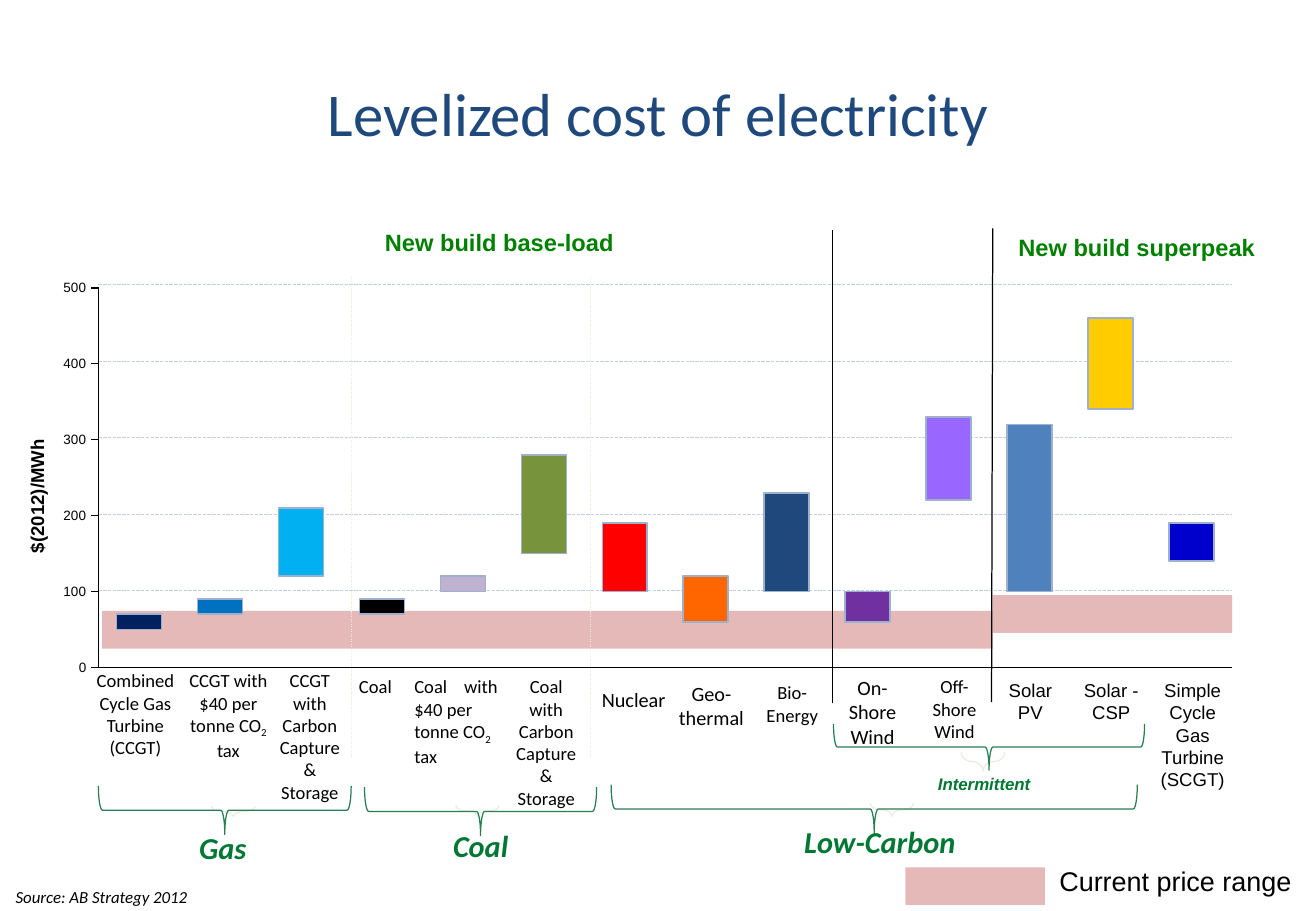
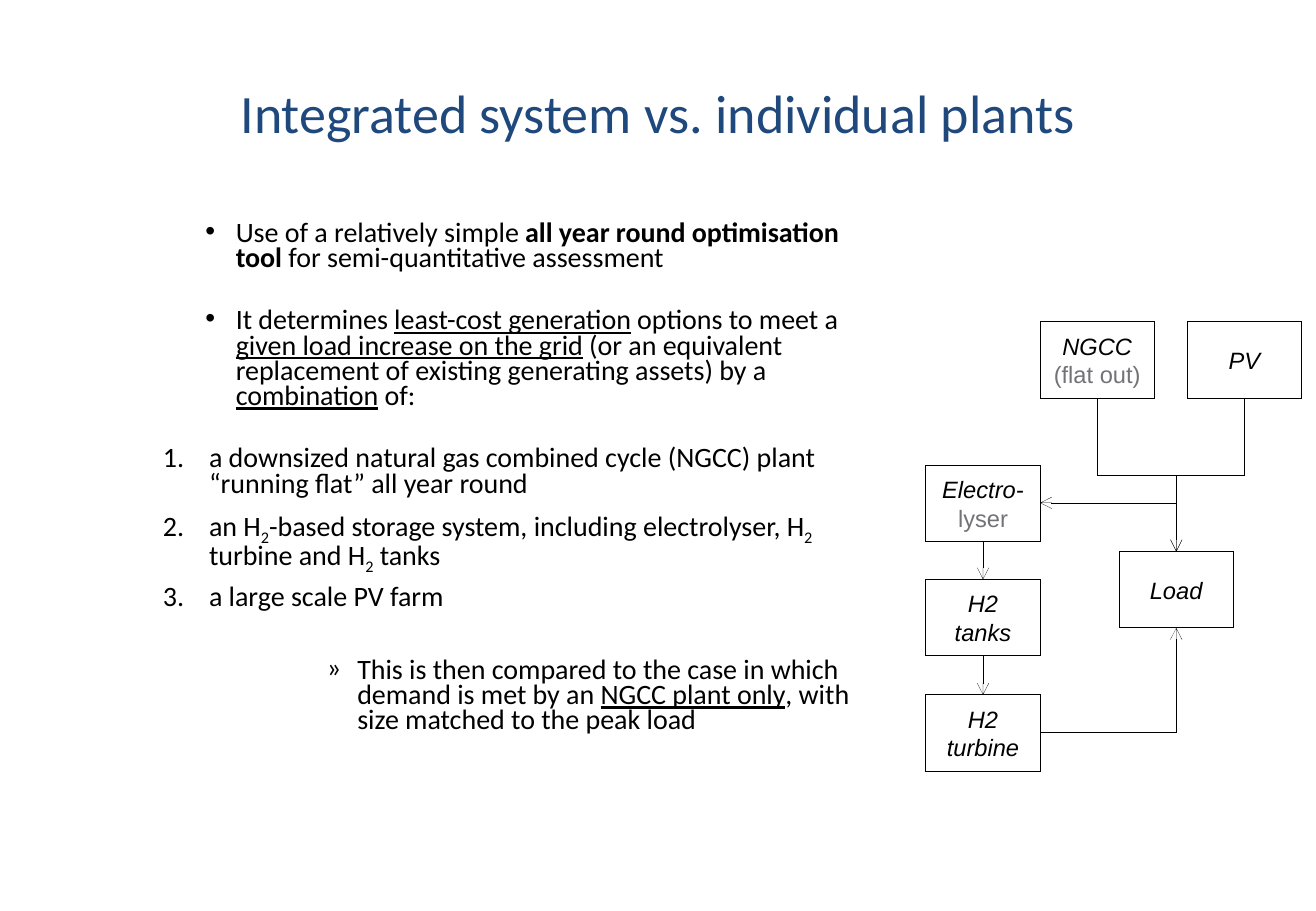
from lxml import etree
from pptx import Presentation
from pptx.chart.data import CategoryChartData
from pptx.dml.color import RGBColor
from pptx.enum.chart import XL_CHART_TYPE as Kind, XL_TICK_LABEL_POSITION as Label
from pptx.enum.chart import XL_TICK_MARK as Tick
from pptx.enum.dml import MSO_LINE as Dash
from pptx.enum.shapes import MSO_CONNECTOR as Wire, MSO_SHAPE as Form
from pptx.enum.text import MSO_ANCHOR as Anchor, MSO_AUTO_SIZE as Auto, PP_ALIGN as Align
from pptx.oxml import parse_xml
from pptx.oxml.ns import nsdecls, qn
from pptx.util import Inches, Pt

BLACK = RGBColor(0x00, 0x00, 0x00)
NAVY = RGBColor(0x1F, 0x49, 0x7D)
LEAF = RGBColor(0x00, 0x80, 0x00)
GREEN = RGBColor(0x00, 0x78, 0x33)
BRACE = RGBColor(0x2A, 0x7E, 0x54)
CREAM = RGBColor(0xEE, 0xEC, 0xE1)
GRID = RGBColor(0xC3, 0xCF, 0xE1)
EDGE = RGBColor(0x9D, 0xB1, 0xCF)
ROSE = RGBColor(0xC0, 0x50, 0x4D)
GREY = RGBColor(0x73, 0x73, 0x77)
ARIAL, BODY = "Arial", "Calibri"
HAIR = 0.01


def sub(parent, tag, **attrs):
    return etree.SubElement(parent, qn(tag), attrs)


def font(par, size, face=BODY, color=BLACK, bold=False, italic=False):
    par.font.size, par.font.name = Pt(size), face
    par.font.bold, par.font.italic = bold, italic
    par.font.color.rgb = color


def fill_runs(par, parts):
    """Add text; a part may be (text, mark): b bold, u underline, s subscript."""
    for part in [parts] if isinstance(parts, str) else parts:
        text, mark = (part, "") if isinstance(part, str) else part
        run = par.add_run()
        run.text = text
        if mark == "b":
            run.font.bold = True
        elif mark == "u":
            run.font.underline = True
        elif mark == "s":
            run._r.get_or_add_rPr().set("baseline", "-25000")


class Deck:
    def __init__(self):
        self.prs = Presentation()
        self.prs.slide_width, self.prs.slide_height = Inches(10.83), Inches(7.5)
        self.slide = None

    def start(self, layout, title, size):
        self.slide = self.prs.slides.add_slide(self.prs.slide_layouts[layout])
        head = self.slide.shapes.title
        self.place(head, 0.54, 0.3, 9.75, 1.25)
        head.text_frame.vertical_anchor = Anchor.MIDDLE
        par = head.text_frame.paragraphs[0]
        par.alignment = Align.CENTER
        fill_runs(par, title)
        font(par, size, color=NAVY)

    def place(self, shape, x, y, w, h):
        shape.left, shape.top = Inches(x), Inches(y)
        shape.width, shape.height = Inches(w), Inches(h)

    def text(self, x, y, w, h, parts, size, face=BODY, align=Align.CENTER,
             pad=False, wrap=True, turn=0, tab=None, **look):
        box = self.slide.shapes.add_textbox(Inches(x), Inches(y), Inches(w), Inches(h))
        box.rotation = turn
        frame = box.text_frame
        frame.word_wrap = wrap
        if pad:
            frame.auto_size = Auto.SHAPE_TO_FIT_TEXT
        else:
            frame.margin_left = frame.margin_right = 0
            frame.margin_top = frame.margin_bottom = 0
        par = frame.paragraphs[0]
        par.alignment = align
        if tab:
            tabs = sub(par._p.get_or_add_pPr(), "a:tabLst")
            sub(tabs, "a:tab", pos=str(Inches(tab)), algn="l")
        fill_runs(par, parts)
        font(par, size, face, **look)

    def tag(self, x, y, w, h, words, size, face=BODY, **look):
        self.text(x, y, w, h, words, size, face, Align.LEFT, pad=True, wrap=False, **look)

    def band(self, x, y, w):
        bar = self.slide.shapes.add_shape(
            Form.RECTANGLE, Inches(x), Inches(y), Inches(w), Inches(0.31))
        bar.shadow.inherit = False
        bar.line.fill.background()
        bar.fill.solid()
        bar.fill.fore_color.rgb = ROSE
        tone = bar._element.spPr.find(qn("a:solidFill"))[0]
        sub(tone, "a:alpha", val="40000")

    def brace(self, x, y, w, h, color, bend=None):
        """Brace with its tip down, filling the given area once turned."""
        left, top = x + (w - h) / 2, y + (h - w) / 2
        arm = self.slide.shapes.add_shape(
            Form.LEFT_BRACE, Inches(left), Inches(top), Inches(h), Inches(w))
        arm.rotation = 270
        arm.shadow.inherit = False
        arm.fill.background()
        arm.line.color.rgb, arm.line.width = color, Pt(0.75)
        if bend:
            arm.adjustments[0] = bend

    def line(self, x1, y1, x2, y2, color=BLACK, width=0.75, dash=None,
             arrow=False, kind=Wire.STRAIGHT):
        wire = self.slide.shapes.add_connector(
            kind, Inches(x1), Inches(y1), Inches(x2), Inches(y2))
        wire.line.color.rgb, wire.line.width = color, Pt(width)
        if dash:
            wire.line.dash_style = dash
        if arrow:
            sub(wire.line._get_or_add_ln(), "a:tailEnd", type="arrow")
        sub(wire._element.spPr, "a:effectLst")
        return wire

    def drop(self, x1, y1, x2, y2):
        """Elbow arrow that leaves downwards, steps sideways and goes on down."""
        mid_x, mid_y = (x1 + x2) / 2, (y1 + y2) / 2
        long, wide = (y2 - y1) / 2, abs(x2 - x1) / 2
        right = x2 > x1
        if right:
            long = -long
        wire = self.line(mid_x - long, mid_y - wide, mid_x + long, mid_y + wide,
                         width=HAIR, arrow=True, kind=Wire.ELBOW)
        wire._element.spPr.find(qn("a:xfrm")).set("rot", "16200000" if right else "5400000")

    def corner(self, x1, y1, x2, y2):
        wire = self.line(x1, y1, x2, y2, width=HAIR, arrow=True, kind=Wire.ELBOW)
        wire._element.spPr.find(qn("a:prstGeom")).set("prst", "bentConnector2")

    def block(self, x, y, rows):
        box = self.slide.shapes.add_shape(
            Form.RECTANGLE, Inches(x), Inches(y), Inches(0.94), Inches(0.63))
        box.shadow.inherit = False
        box.fill.background()
        box.line.color.rgb, box.line.width = BLACK, Pt(HAIR)
        frame = box.text_frame
        frame.word_wrap = False
        frame.vertical_anchor = Anchor.MIDDLE
        frame.margin_left = frame.margin_right = frame.margin_top = frame.margin_bottom = 0
        for i, (words, plain) in enumerate(rows):
            par = frame.add_paragraph() if i else frame.paragraphs[0]
            par.alignment = Align.CENTER
            fill_runs(par, words)
            font(par, 14, ARIAL, GREY if plain else BLACK, italic=not plain)

    def bars(self, low, span, tones):
        data = CategoryChartData()
        data.categories = [str(i + 1) for i in range(len(low))]
        data.add_series("Series 1", low)
        data.add_series("Series 2", span)
        chart = self.slide.shapes.add_chart(
            Kind.COLUMN_STACKED, Inches(0.44), Inches(2.19), Inches(9.76), Inches(3.44),
            data).chart
        chart.has_legend = chart.has_title = False
        chart.font.name, chart.font.size = ARIAL, Pt(12)
        chart.font.color.rgb = BLACK
        plot = chart.plots[0]
        plot.gap_width, plot.overlap, plot.vary_by_categories = 80, 100, False
        base, top = plot.series
        base.format.fill.background()
        base.format.line.fill.background()
        for item in [top] + [top.points[i] for i in range(len(tones))]:
            item.format.fill.solid()
            item.format.fill.fore_color.rgb = EDGE
            item.format.line.color.rgb, item.format.line.width = EDGE, Pt(1)
        for i, tone in enumerate(tones):
            top.points[i].format.fill.fore_color.rgb = RGBColor.from_string(tone)
        # Axes
        cat, val = chart.category_axis, chart.value_axis
        cat.tick_label_position = Label.NONE
        cat.major_tick_mark, val.major_tick_mark = Tick.NONE, Tick.OUTSIDE
        val.minimum_scale, val.maximum_scale, val.major_unit = 0, 500, 100
        val.tick_labels.number_format = "#,##0"
        val.tick_labels.number_format_is_linked = False
        val.tick_labels.font.size, val.tick_labels.font.name = Pt(8), ARIAL
        val.tick_labels.font.bold = False
        val.tick_labels.font.color.rgb = BLACK
        for axis in (cat, val):
            axis.has_major_gridlines = False
            axis.format.line.color.rgb, axis.format.line.width = BLACK, Pt(1)
        # Fixed plot area and clear background
        root = chart._chartSpace.find(qn("c:chart"))
        area = root.find(qn("c:plotArea"))
        old = area.find(qn("c:layout"))
        if old is not None:
            area.remove(old)
        layout = etree.Element(qn("c:layout"))
        area.insert(0, layout)
        manual = sub(layout, "c:manualLayout")
        for key, value in (("layoutTarget", "inner"), ("xMode", "edge"), ("yMode", "edge"),
                           ("x", "0.038"), ("y", "0.052"), ("w", "0.956"), ("h", "0.909")):
            sub(manual, "c:" + key, val=value)
        clear = ("<c:spPr %s><a:noFill/><a:ln><a:noFill/></a:ln></c:spPr>"
                 % nsdecls("c", "a"))
        area.append(parse_xml(clear))
        root.addnext(parse_xml(clear))

    def items(self, rows):
        body = self.slide.placeholders[1]
        self.place(body, 0.59, 1.78, 6.7, 5.04)
        frame = body.text_frame
        frame.auto_size = Auto.NONE
        for i, (level, left, hang, mark, before, after, parts) in enumerate(rows):
            par = frame.add_paragraph() if i else frame.paragraphs[0]
            par.level = level
            props = par._p.get_or_add_pPr()
            props.set("marL", str(Inches(left)))
            props.set("indent", str(-Inches(hang)))
            sub(props, "a:buFont", typeface=ARIAL if mark == "•" else BODY)
            if mark == "1.":
                sub(props, "a:buAutoNum", type="arabicPeriod")
            else:
                sub(props, "a:buChar", char=mark)
            par.line_spacing = 0.75
            par.space_before, par.space_after = Pt(before), Pt(after)
            fill_runs(par, parts)
            font(par, 16.6)


def costs(deck):
    deck.start(5, "Levelized cost of electricity", 36)
    # Price bands, grid and chart
    deck.band(8.17, 4.9, 1.97)
    deck.band(0.84, 5.03, 7.33)
    for i in range(5):
        y = 2.34 + 0.63 * i
        deck.line(0.81, y, 10.14, y, GRID, 0.25, Dash.LONG_DASH)
    deck.bars([50, 70, 120, 70, 100, 150, 100, 60, 100, 60, 220, 100, 340, 140],
              [20, 20, 90, 20, 20, 130, 90, 60, 130, 40, 110, 220, 120, 50],
              ["002060", "0070C0", "00B0F0", "000000", "BFB2D0", "77933C", "FF0000",
               "FF6600", "1F497D", "7030A0", "9966FF", "4F81BD", "FFCC00", "0000CC"])
    # Dividers
    for x in (2.89, 4.86):
        deck.line(x, 6.23, x, 2.27, CREAM, dash=Dash.ROUND_DOT)
    deck.line(8.16, 5.78, 8.17, 1.88)
    deck.line(6.85, 5.79, 6.85, 1.89)
    # Headings and axis title
    deck.text(2, 1.88, 4.22, 0.24, "New build base-load", 14, ARIAL, color=LEAF, bold=True)
    deck.text(8.28, 1.92, 2.15, 0.24, "New build superpeak", 14, ARIAL, color=LEAF, bold=True)
    deck.text(-0.35, 3.99, 1.31, 0.19, "$(2012)/MWh", 11, ARIAL, turn=270, bold=True)
    # Plant names
    for x, y, w, h, parts, size, face in (
            (0.73, 5.51, 0.77, 0.74, "Combined Cycle Gas Turbine (CCGT)", 11, BODY),
            (1.51, 5.51, 0.74, 0.9, ["CCGT with $40 per tonne CO", ("2", "s"), " tax"], 11, BODY),
            (2.25, 5.51, 0.6, 0.53, "CCGT with Carbon Capture & Storage", 11, BODY),
            (2.89, 5.56, 0.4, 0.13, "Coal", 11, BODY),
            (4.22, 5.56, 0.55, 0.53, "Coal with Carbon Capture & Storage", 11, BODY),
            (4.89, 5.66, 0.65, 0.13, "Nuclear", 12, BODY),
            (5.53, 5.61, 0.65, 0.13, "Geo-thermal", 12, BODY),
            (6.24, 5.61, 0.56, 0.13, "Bio-Energy", 11, BODY),
            (6.94, 5.56, 0.48, 0.71, "On-Shore Wind", 12, BODY),
            (7.61, 5.56, 0.49, 0.27, "Off-Shore Wind", 11, BODY),
            (8.25, 5.59, 0.46, 0.13, "Solar PV", 11, ARIAL),
            (8.84, 5.59, 0.61, 0.13, "Solar - CSP", 11, ARIAL),
            (9.54, 5.59, 0.55, 0.53, "Simple Cycle Gas Turbine (SCGT)", 11, ARIAL)):
        deck.text(x, y, w, h, parts, size, face)
    deck.text(3.41, 5.56, 0.74, 0.74, ["Coal\twith $40 per tonne CO", ("2", "s"), " tax"],
              11, align=Align.LEFT, tab=0.41)
    # Groups
    for x, y, h in ((1.74, 6.64, 0.08), (3.75, 6.63, 0.09), (7.16, 6.61, 0.11),
                    (7.91, 6.19, 0.16)):
        deck.brace(x, y, 0.36, h, CREAM, 1.72)
    for x, y, w, h in ((0.81, 6.47, 2.08, 0.4), (3, 6.48, 1.91, 0.4),
                       (5.03, 6.46, 4.33, 0.4), (6.86, 5.96, 2.56, 0.38)):
        deck.brace(x, y, w, h, BRACE)
    for x, y, w, words in ((1.54, 6.78, 0.59, "Gas"), (3.63, 6.76, 0.66, "Coal"),
                           (6.52, 6.73, 1.46, "Low-Carbon")):
        deck.tag(x, y, w, 0.41, words, 18, color=GREEN, bold=True, italic=True)
    deck.tag(7.62, 6.32, 0.97, 0.27, "Intermittent", 10, ARIAL,
             color=GREEN, bold=True, italic=True)
    # Legend and source
    deck.band(7.45, 7.14, 1.15)
    deck.tag(8.62, 7.07, 2.13, 0.37, "Current price range", 16, ARIAL)
    deck.text(0.03, 7.25, 3.56, 0.27, "Source: AB Strategy 2012", 10,
              align=Align.LEFT, pad=True, italic=True)


def system(deck):
    deck.start(1, "Integrated system vs. individual plants", 32)
    # List: level, left, hanging, mark, space before and after, text
    dot, num = (2, 1.25, 0.25, "•"), (5, 1.03, 0.38, "1.")
    two = ("2", "s")
    deck.items([
        (*dot, 3.3, 0, ["Use of a relatively simple ", ("all year round optimisation tool ", "b"),
                        "for semi-quantitative assessment"]),
        (*dot, 22, 0, ["It determines ", ("least-cost generation", "u"), " options to meet a ",
                       ("given load increase on the grid", "u"),
                       " (or an equivalent replacement of existing generating assets) by a ",
                       ("combination", "u"), " of:"]),
        (*num, 22, 6, "a downsized natural gas combined cycle (NGCC) plant "
                      "“running flat” all year round"),
        (*num, 3.3, 6, ["an H", two, "-based storage system, including electrolyser, H", two,
                        " turbine and H", two, " tanks"]),
        (*num, 3.3, 6, "a large scale PV farm"),
        (4, 2.25, 0.25, "»", 22, 0,
         ["This is then compared to the case in which demand is met by an ",
          ("NGCC plant only", "u"), ", with size matched to the peak load"])])
    # Flow diagram
    for x, y, rows in (
            (8.56, 2.65, [("NGCC", False), ("(flat out)", True)]),
            (9.77, 2.65, [("PV", False)]),
            (7.62, 3.83, [("Electro-", False), ("lyser", True)]),
            (7.62, 4.77, [("H2", False), ("tanks", False)]),
            (7.62, 5.72, [("H2", False), ("turbine", False)]),
            (9.21, 4.54, [("Load", False)])):
        deck.block(x, y, rows)
    for x in (9.03, 10.24):
        deck.drop(x, 3.28, 9.68, 4.54)
    for ends in ((9.68, 4.14, 8.56, 4.14), (8.09, 4.46, 8.09, 4.77), (8.09, 5.4, 8.09, 5.72)):
        deck.line(*ends, width=HAIR, arrow=True)
    deck.corner(8.56, 6.03, 9.68, 5.17)


def main():
    deck = Deck()
    costs(deck)
    system(deck)
    deck.prs.save("out.pptx")


if __name__ == "__main__":
    main()
